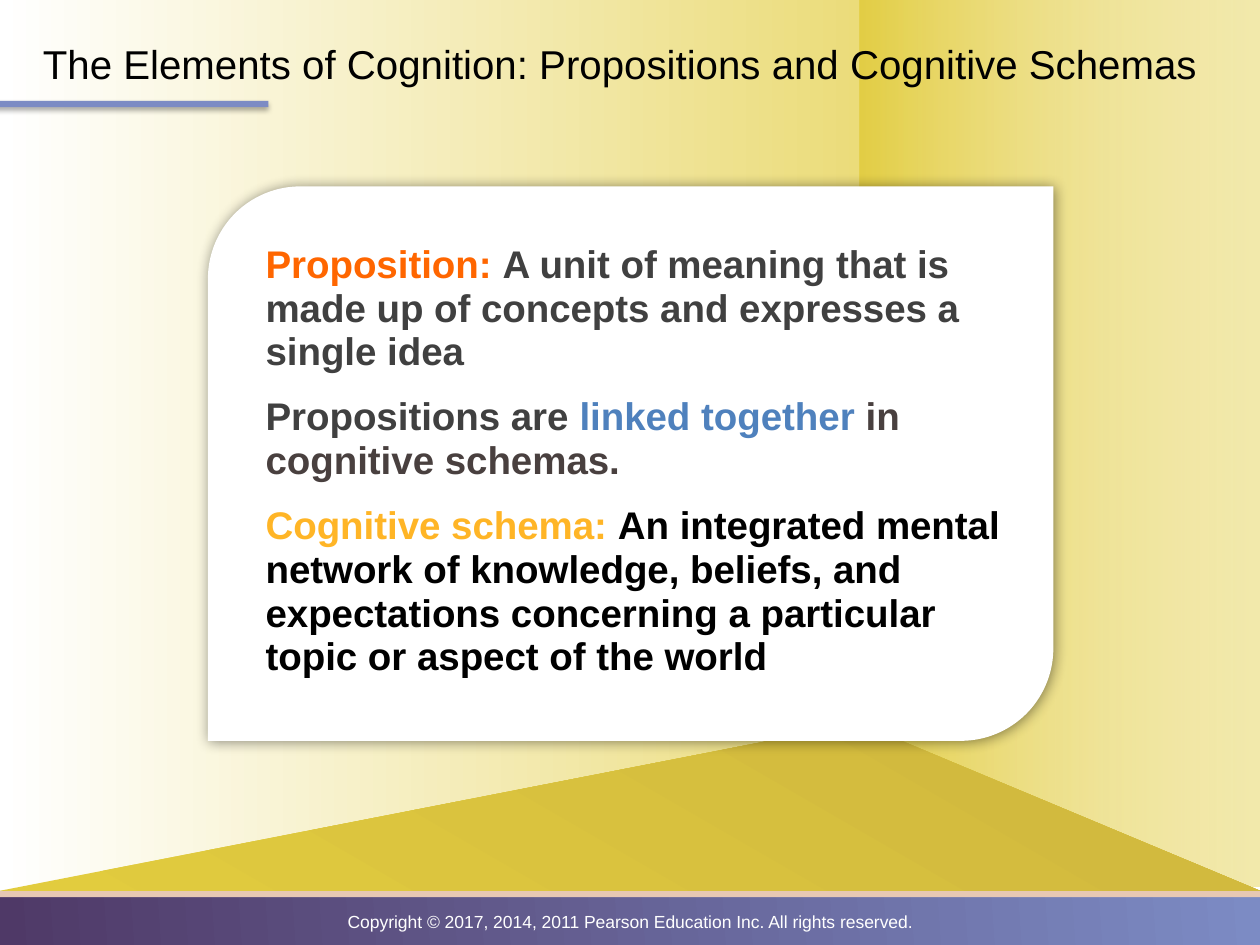
from lxml import etree
from pptx import Presentation
from pptx.dml.color import RGBColor
from pptx.enum.shapes import MSO_SHAPE
from pptx.enum.text import MSO_ANCHOR, MSO_AUTO_SIZE, PP_ALIGN
from pptx.oxml.ns import qn
from pptx.util import Inches, Pt

GOLD, DARK_GOLD, WHITE, BLACK = "E2CC3E", "D2BA3E", "FFFFFF", "000000"
PURPLE, PERIWINKLE, PEACH = "4F3967", "7C8BC4", "E7C8B3"

DEFINITIONS = [
    [("Proposition: ", "FF6600"),
     ("A unit of meaning that is made up of concepts and expresses a single idea", "404040")],
    [("Propositions are ", "404040"), ("linked together", "4F81BD"),
     (" in cognitive schemas.", "49403F")],
    [("Cognitive schema: ", "FFB526"),
     ("An integrated mental network of knowledge, beliefs, and expectations "
      "concerning a particular topic or aspect of the world", BLACK)],
]


def color(value):
    return RGBColor.from_string(value)


def inches(box):
    return [Inches(length) for length in box]


def add_color(parent, value, opacity):
    node = etree.SubElement(parent, qn("a:srgbClr"), val=value)
    if opacity < 100:
        etree.SubElement(node, qn("a:alpha"), val=str(opacity * 1000))


def add_block(page, box, fill=None, kind=MSO_SHAPE.RECTANGLE):
    shape = page.shapes.add_shape(kind, *inches(box))
    shape.shadow.inherit = False
    shape.line.fill.background()
    if fill:
        shape.fill.solid()
        shape.fill.fore_color.rgb = color(fill)
    return shape


def set_gradient(shape, stops, angle=0):
    """Stops are (position %, colour, opacity %); the angle runs clockwise."""
    shape.fill.gradient()
    gradient = shape.element.spPr.find(qn("a:gradFill"))
    for child in list(gradient):
        gradient.remove(child)
    stop_list = etree.SubElement(gradient, qn("a:gsLst"))
    for position, value, opacity in stops:
        stop = etree.SubElement(stop_list, qn("a:gs"), pos=str(position * 1000))
        add_color(stop, value, opacity)
    etree.SubElement(gradient, qn("a:lin"), ang=str(angle * 60000), scaled="0")


def set_shadow(shape, opacity, blur, distance, angle):
    effects = shape.element.spPr.find(qn("a:effectLst"))
    shadow = etree.SubElement(
        effects, qn("a:outerShdw"), blurRad=str(Pt(blur)), dist=str(Pt(distance)),
        dir=str(angle * 60000), algn="tl", rotWithShape="0")
    add_color(shadow, BLACK, opacity)


def set_font(font, size, value, bold=False):
    font.name = "Arial"
    font.size = Pt(size)
    font.bold = bold
    font.color.rgb = color(value)


def add_text_box(page, box):
    frame = page.shapes.add_textbox(*inches(box)).text_frame
    frame.word_wrap = True
    return frame


def add_footer(page, box):
    left, top, width, height = box
    band = add_block(page, box)
    set_gradient(band, [(0, PURPLE, 100), (100, PERIWINKLE, 100)], 356)
    add_block(page, (left, top - 0.01, width + 0.05, 0.05), PEACH)
    para = add_text_box(page, (left, top + 0.1, width, 0.27)).paragraphs[0]
    para.text = "Copyright © 2017, 2014, 2011 Pearson Education Inc. All rights reserved."
    para.alignment = PP_ALIGN.CENTER
    set_font(para.font, 10, WHITE)


def add_backdrop(page, box):
    left, top, width, height = box
    wall = add_block(page, box)
    set_gradient(wall, [(0, WHITE, 100), (99, GOLD, 100)])
    corner = 6.82
    side = add_block(page, (left + corner, top - 0.01, width - corner, height + 0.03))
    set_gradient(side, [(0, GOLD, 89), (97, WHITE, 56)])
    # Floor, with its apex below the corner of the walls
    floor = add_block(page, (left, top + 5.74, width, 1.33),
                      kind=MSO_SHAPE.ISOSCELES_TRIANGLE)
    floor.adjustments[0] = corner / width
    set_gradient(floor, [(0, GOLD, 100), (80, DARK_GOLD, 100), (100, DARK_GOLD, 100)], 300)


def add_title(page, box):
    title = page.shapes.title
    title.left, title.top, title.width, title.height = inches(box)
    page.shapes.element.append(title.element)  # in front of the backdrop
    frame = title.text_frame
    frame.auto_size = MSO_AUTO_SIZE.NONE
    frame.vertical_anchor = MSO_ANCHOR.MIDDLE
    para = frame.paragraphs[0]
    para.text = "The Elements of Cognition: Propositions and Cognitive Schemas"
    para.alignment = PP_ALIGN.LEFT
    set_font(para.font, 23, BLACK)


def add_card(page, box):
    left, top, width, height = box
    card = add_block(page, box, WHITE, MSO_SHAPE.ROUND_2_DIAG_RECTANGLE)
    set_shadow(card, 43, 8, 1, 45)
    frame = add_text_box(page, (left + 0.36, top + 0.4, 6.1, 3.61))
    for index, pieces in enumerate(DEFINITIONS):
        para = frame.add_paragraph() if index else frame.paragraphs[0]
        para.line_spacing = 0.95
        if index < len(DEFINITIONS) - 1:
            para.space_after = Pt(12)
        for text, value in pieces:
            span = para.add_run()
            span.text = text
            set_font(span.font, 22, value, bold=True)


def add_accent(page, box):
    set_shadow(add_block(page, box, PERIWINKLE), 35, 3.1, 1.8, 90)


def main():
    deck = Presentation()
    deck.slide_width, deck.slide_height = Inches(10), Inches(7.5)
    page = deck.slides.add_slide(deck.slide_layouts[5])
    add_footer(page, (0, 7.08, 10, 0.45))
    add_backdrop(page, (0, 0, 10, 7.04))
    add_title(page, (0.24, 0.21, 9.76, 0.59))
    add_card(page, (1.65, 1.48, 6.71, 4.4))
    add_accent(page, (-0.19, 0.8, 2.32, 0.05))
    deck.save("out.pptx")


if __name__ == "__main__":
    main()
